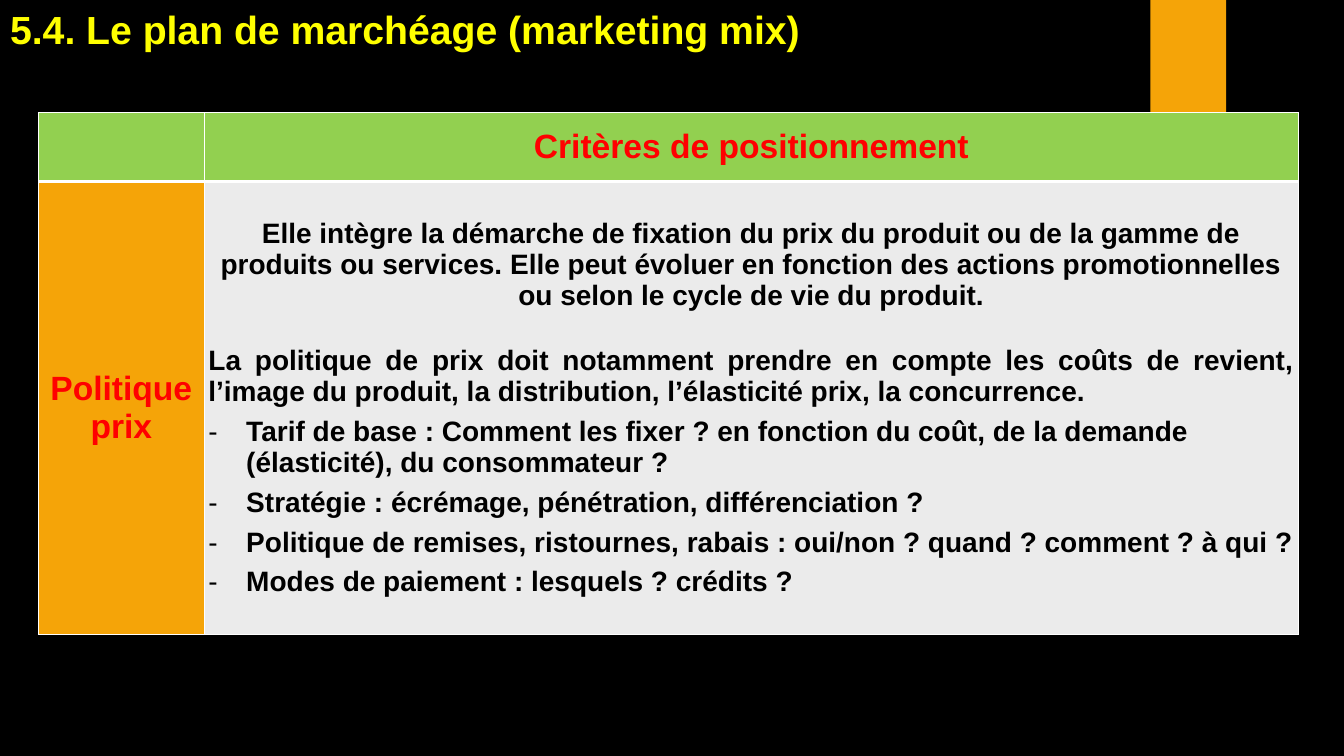
"""Build the slide on the price policy within the marketing mix."""
import pptx
import pptx.util
import pptx.dml.color
import pptx.enum.shapes
import pptx.enum.text
import pptx.oxml
import pptx.oxml.ns

Pt = pptx.util.Pt
RGBColor = pptx.dml.color.RGBColor
Align = pptx.enum.text.PP_ALIGN
Anchor = pptx.enum.text.MSO_ANCHOR

BLACK = RGBColor(0x00, 0x00, 0x00)
YELLOW = RGBColor(0xFF, 0xFF, 0x00)
RED = RGBColor(0xFF, 0x00, 0x00)
GREEN = RGBColor(0x92, 0xD0, 0x50)
ORANGE = RGBColor(0xF5, 0xA4, 0x08)
GREY = RGBColor(0xEB, 0xEB, 0xEB)

TITLE = "5.4. Le plan de marchéage (marketing mix)"
HEADING = "Critères de positionnement"
POLICY = ["Politique", "prix"]
DEFINITION = (
    "Elle intègre la démarche de fixation du prix du produit ou de la gamme de "
    "produits ou services. Elle peut évoluer en fonction des actions "
    "promotionnelles ou selon le cycle de vie du produit."
)
FACTORS = (
    "La politique de prix doit notamment prendre en compte les coûts de revient, "
    "l’image du produit, la distribution, l’élasticité prix, la concurrence."
)
DECISIONS = [
    "Tarif de base : Comment les fixer ? en fonction du coût, de la demande "
    "(élasticité), du consommateur ?",
    "Stratégie : écrémage, pénétration, différenciation ?",
    "Politique de remises, ristournes, rabais : oui/non ? quand ? comment ? à qui ?",
    "Modes de paiement : lesquels ? crédits ?",
]

label = dict(size=24, color=RED, align=Align.CENTER)
CELLS = [
    [(GREEN, []), (GREEN, [(HEADING, label)])],
    [
        (ORANGE, [(word, label) for word in POLICY]),
        (GREY, [
            (DEFINITION, dict(align=Align.CENTER, after=18)),
            (FACTORS, dict(align=Align.JUSTIFY, before=6)),
            *((decision, dict(before=6, dash=True)) for decision in DECISIONS),
        ]),
    ],
]
COLUMN_WIDTHS = [118.6, 781.4]
ROW_HEIGHTS = [49, 323.5]
HEADER_RULE, THIN_RULE = 3, 1


def write(frame, text, size=20, color=BLACK, align=Align.LEFT, before=0, after=0, dash=False):
    """Add one bold paragraph, filling the empty first one when there is one."""
    first = frame.paragraphs[0]
    para = frame.add_paragraph() if first.runs else first
    if dash:
        properties = para._p.get_or_add_pPr()
        properties.set("marL", str(Pt(27)))
        properties.set("indent", str(-Pt(27)))
        for name, key, value in (("buFont", "typeface", "Arial"), ("buChar", "char", "-")):
            properties.append(pptx.oxml.parse_xml(
                f'<a:{name} {pptx.oxml.ns.nsdecls("a")} {key}="{value}"/>'))
    para.alignment = align
    para.space_before, para.space_after = Pt(before), Pt(after)
    span = para.add_run()
    span.text = text
    span.font.name, span.font.size, span.font.bold = "Arial", Pt(size), True
    span.font.color.rgb = color


def add_borders(cell, widths):
    """Draw white borders on the sides named in widths."""
    properties = cell._tc.get_or_add_tcPr()
    for side, width in widths.items():
        properties.append(pptx.oxml.parse_xml(
            f'<a:ln{side} {pptx.oxml.ns.nsdecls("a")} w="{Pt(width)}"><a:solidFill>'
            f'<a:srgbClr val="FFFFFF"/></a:solidFill></a:ln{side}>'))


def add_policy_table(page):
    """Add the table of positioning criteria."""
    table = page.shapes.add_table(
        len(ROW_HEIGHTS), len(COLUMN_WIDTHS), Pt(27.4), Pt(80.6),
        Pt(sum(COLUMN_WIDTHS)), Pt(sum(ROW_HEIGHTS))).table
    table.horz_banding = False
    for column, width in zip(table.columns, COLUMN_WIDTHS):
        column.width = Pt(width)
    for index, (row, height) in enumerate(zip(table.rows, ROW_HEIGHTS)):
        row.height = Pt(height)
        top, bottom = (THIN_RULE, HEADER_RULE) if index == 0 else (HEADER_RULE, THIN_RULE)
        for cell, (fill, paragraphs) in zip(row.cells, CELLS[index]):
            add_borders(cell, dict(L=THIN_RULE, R=THIN_RULE, T=top, B=bottom))
            cell.fill.solid()
            cell.fill.fore_color.rgb = fill
            cell.vertical_anchor = Anchor.MIDDLE
            cell.margin_left = cell.margin_right = Pt(2.9)
            cell.margin_top = cell.margin_bottom = Pt(0)
            for text, style in paragraphs:
                write(cell.text_frame, text, **style)


def main():
    """Build and save the deck."""
    deck = pptx.Presentation()
    deck.slide_width, deck.slide_height = Pt(960), Pt(540)
    page = deck.slides.add_slide(deck.slide_layouts[5])
    page.background.fill.solid()
    page.background.fill.fore_color.rgb = BLACK

    band = page.shapes.add_shape(
        pptx.enum.shapes.MSO_SHAPE.RECTANGLE, Pt(821.8), Pt(0), Pt(54), Pt(90))
    band.shadow.inherit = False
    band.fill.solid()
    band.fill.fore_color.rgb = ORANGE
    band.line.fill.background()

    add_policy_table(page)

    title = page.shapes.title
    title.left, title.top, title.width, title.height = Pt(0), Pt(0), Pt(913), Pt(41)
    frame = title.text_frame
    frame.word_wrap = True
    frame.auto_size = pptx.enum.text.MSO_AUTO_SIZE.NONE
    frame.vertical_anchor = Anchor.TOP
    frame.margin_top = Pt(3.6)
    write(frame, TITLE, size=28, color=YELLOW)

    deck.save("out.pptx")


if __name__ == "__main__":
    main()
